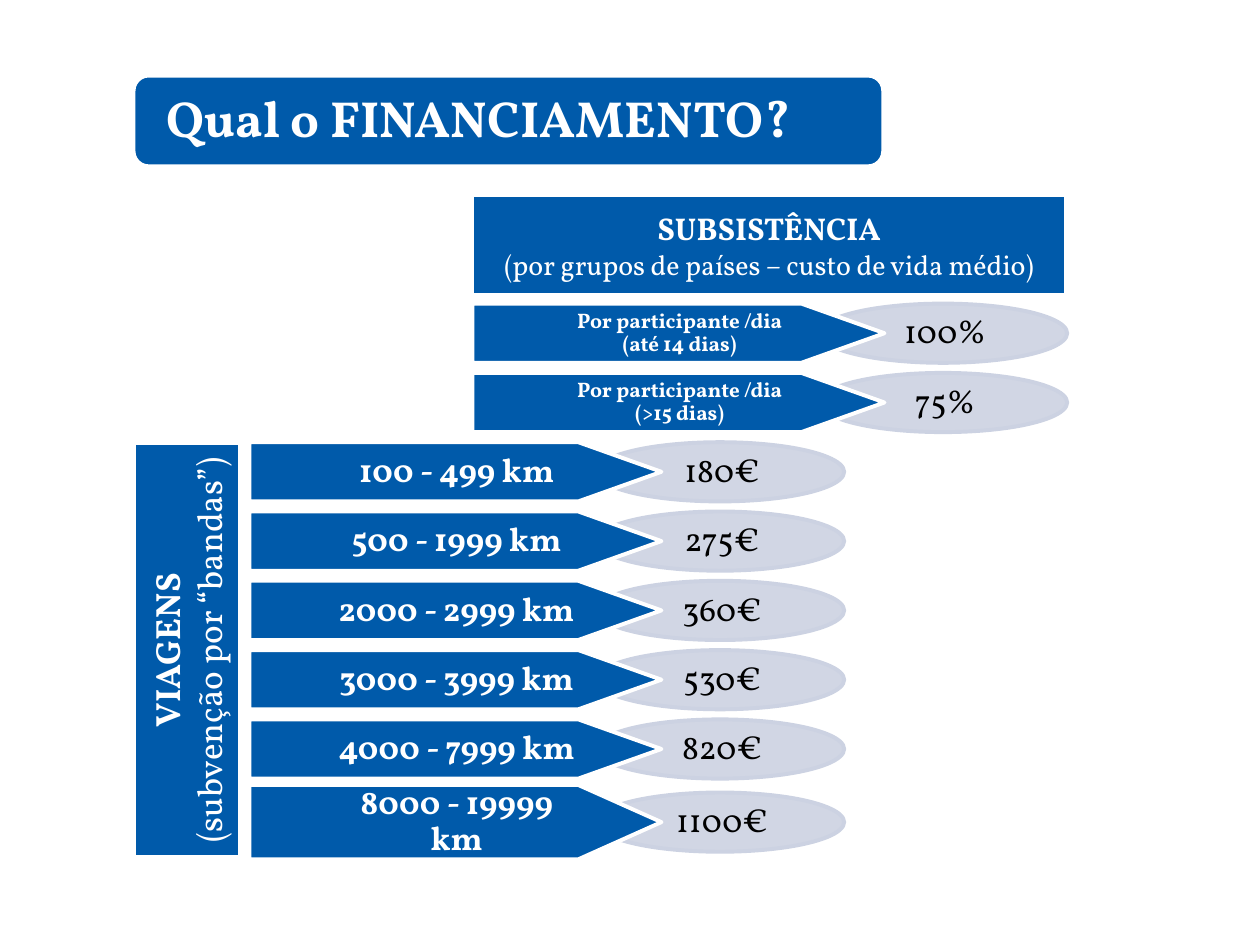
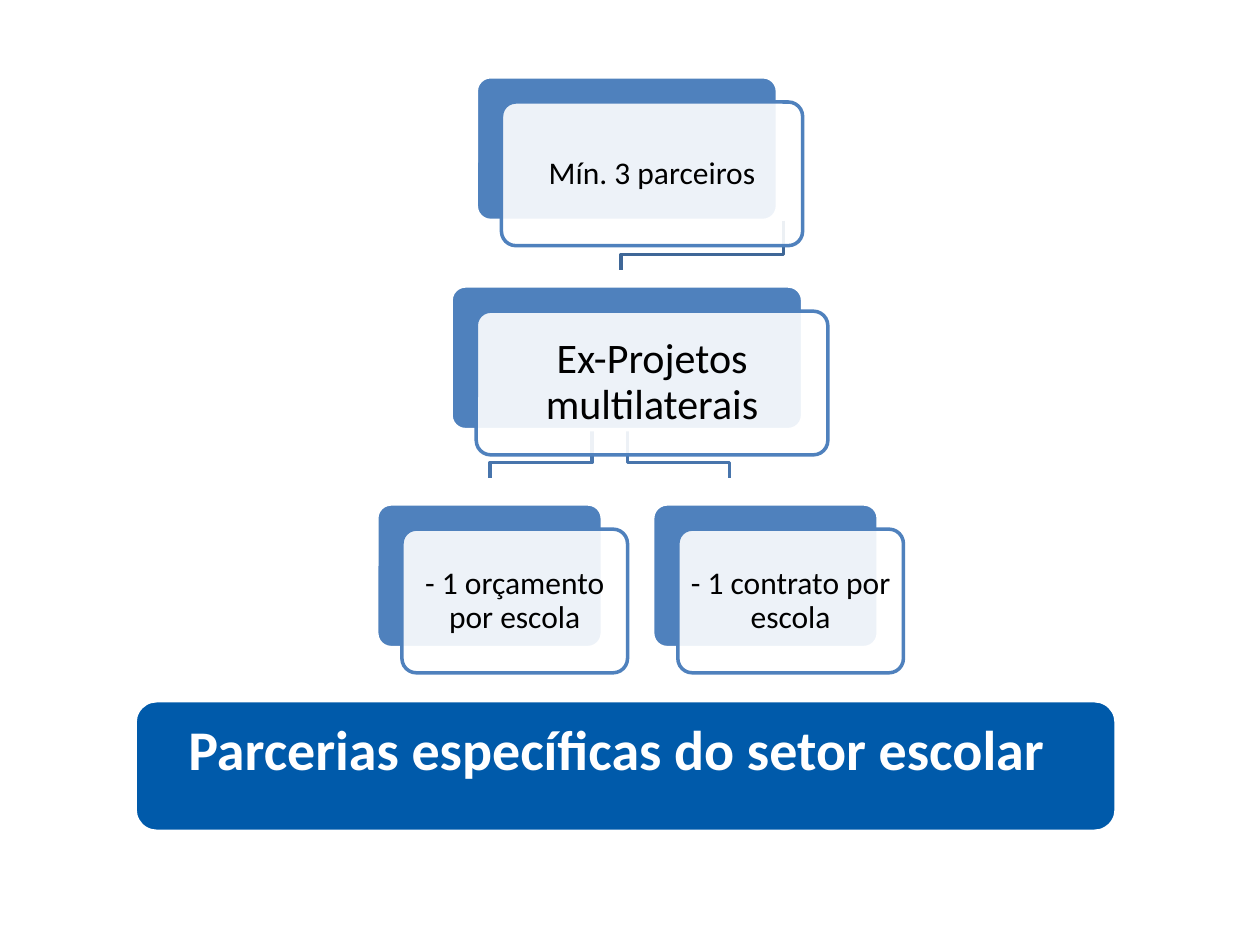
from dataclasses import dataclass

from lxml import etree
from pptx import Presentation
from pptx.dml.color import RGBColor
from pptx.enum.shapes import MSO_SHAPE
from pptx.enum.text import MSO_ANCHOR, PP_ALIGN
from pptx.oxml.ns import qn
from pptx.util import Inches, Pt


@dataclass(frozen=True)
class Theme:
    blue: str = "005AAA"
    steel: str = "4F81BD"
    pale: str = "CCD2E2"
    white: str = "FFFFFF"
    black: str = "000000"
    serif: str = "Vollkorn"
    sans: str = "Calibri"
    edge: float = 2.25
    thin: float = 2
    title: int = 29
    banner: int = 32
    label: int = 19
    small: int = 12
    box: int = 18


THEME = Theme()

TITLE = "Qual o FINANCIAMENTO?"
DAILY = [
    ("Por participante /dia (até 14 dias)", "100%"),
    ("Por participante /dia (>15 dias)", "75%"),
]
TRAVEL = [
    ("100 - 499 km", "180€"),
    ("500 - 1999 km", "275€"),
    ("2000 - 2999 km", "360€"),
    ("3000 - 3999 km", "530€"),
    ("4000 - 7999 km", "820€"),
    ("8000 - 19999 km", "1100€"),
]
# Heading lines: text, size, bold
COSTS = [
    ("SUBSISTÊNCIA", 18, True),
    ("(por grupos de países – custo de vida médio)", 16, False),
]
TRIPS = [("VIAGENS", 20, True), ("(subvenção por “bandas”)", 20, False)]

BANNER = "Parcerias específicas do setor escolar"
# Cards: text, left, top, width, size
CARDS = [
    ("Mín. 3 parceiros", 3.78, 0.61, 2.39, THEME.box),
    ("Ex-Projetos multilaterais", 3.58, 2.27, 2.79, 24),
    ("- 1 orçamento por escola", 2.99, 4, 1.79, THEME.box),
    ("- 1 contrato por escola", 5.18, 4, 1.79, THEME.box),
]
# Links: start x, end x, top, colour
LINKS = [
    (4.98, 5.79, 3.4, "4875AC"),
    (4.7, 3.89, 3.4, "4875AC"),
    (6.22, 4.93, 1.75, "3F6797"),
]

ROW_TOP, PITCH, ROW_H = 2.41, 0.55, 0.47
ARROW_W, TIP, OVAL_W, OVAL_DX = 3.27, 0.66, 1.97, 2.75
CARD_H, SHIFT = 1.14, 0.2


def paint(fill, color, alpha=100):
    fill.solid()
    fill.fore_color.rgb = RGBColor.from_string(color)
    if alpha < 100:
        for node in fill._xPr.iter(qn("a:srgbClr")):
            etree.SubElement(node, qn("a:alpha"), val=str(alpha * 1000))


def draw(slide, kind, left, top, width, height, fill=THEME.blue,
         edge=THEME.white, weight=THEME.edge, alpha=100, adj=None):
    shape = slide.shapes.add_shape(
        kind, Inches(left), Inches(top), Inches(width), Inches(height))
    shape.shadow.inherit = False
    paint(shape.fill, fill, alpha)
    paint(shape.line.fill, edge)
    shape.line.width = Pt(weight)
    if adj is not None:
        shape.adjustments[0] = adj
    return shape


def write(shape, lines, size=THEME.label, color=THEME.white, font=THEME.serif,
          bold=False, align=PP_ALIGN.CENTER, pads=(0.03,) * 4, space=0.9):
    """Fill a shape with one text, or with (text, size, bold) lines."""
    if isinstance(lines, str):
        lines = [(lines, size, bold)]
    frame = shape.text_frame
    frame.word_wrap = True
    frame.vertical_anchor = MSO_ANCHOR.MIDDLE
    (frame.margin_left, frame.margin_top,
     frame.margin_right, frame.margin_bottom) = map(Inches, pads)
    for i, (text, pts, heavy) in enumerate(lines):
        para = frame.add_paragraph() if i else frame.paragraphs[0]
        para.alignment = align
        para.line_spacing = space
        run = para.add_run()
        run.text = text
        run.font.name = font
        run.font.size = Pt(pts)
        run.font.bold = heavy
        run.font.color.rgb = RGBColor.from_string(color)


def add_row(slide, label, value, left, top, height=ROW_H, size=THEME.label):
    """Place an arrow with its label over an oval with its value."""
    mid = top + height / 2
    oval = draw(slide, MSO_SHAPE.OVAL, left + OVAL_DX, mid - ROW_H / 2,
                OVAL_W, ROW_H, THEME.pale, THEME.pale, alpha=90)
    write(oval, value, color=THEME.black, pads=(0.13, 0, 0.1, 0))
    arrow = draw(slide, MSO_SHAPE.PENTAGON, left, top, ARROW_W, height,
                 adj=TIP / height)
    write(arrow, label, size=size, bold=True, pads=(0.7, 0.01, 0.35, 0.01))


def add_link(slide, start, end, top, color):
    turn, foot = top + 0.27, top + 0.39
    pen = slide.shapes.build_freeform(Inches(start), Inches(top))
    pen.add_line_segments(
        [(Inches(x), Inches(y))
         for x, y in ((start, turn), (end, turn), (end, foot))], close=False)
    link = pen.convert_to_shape()
    link.shadow.inherit = False
    link.fill.background()
    paint(link.line.fill, color)
    link.line.width = Pt(THEME.thin)


def add_card(slide, text, left, top, width, size):
    draw(slide, MSO_SHAPE.ROUNDED_RECTANGLE, left, top, width, CARD_H,
         THEME.steel, weight=THEME.thin, adj=0.1)
    front = draw(slide, MSO_SHAPE.ROUNDED_RECTANGLE, left + SHIFT, top + SHIFT,
                 width, CARD_H, THEME.white, THEME.steel, THEME.thin,
                 alpha=90, adj=0.1)
    write(front, text, size=size, color=THEME.black, font=THEME.sans,
          pads=(0.05,) * 4)


def fund_slide(slide):
    title = draw(slide, MSO_SHAPE.ROUNDED_RECTANGLE, 1.06, 0.6, 5.95, 0.72)
    write(title, TITLE, size=THEME.title, bold=True, align=PP_ALIGN.LEFT,
          pads=(0.23, 0, 0.23, 0))
    write(draw(slide, MSO_SHAPE.RECTANGLE, 3.75, 1.55, 4.71, 0.79),
          COSTS, space=1)
    side = draw(slide, MSO_SHAPE.RECTANGLE, -0.16, 4.74, 3.29, 0.84)
    side.rotation = 270
    write(side, TRIPS, space=1)
    for i, (label, value) in enumerate(DAILY):
        add_row(slide, label, value, 3.75, ROW_TOP + i * PITCH,
                size=THEME.small)
    for i, (label, value) in enumerate(TRAVEL, len(DAILY)):
        add_row(slide, label, value, 1.98, ROW_TOP + i * PITCH)\
            if (label, value) != TRAVEL[-1] else \
            add_row(slide, label, value, 1.98, 6.23, height=0.59)


def school_slide(slide):
    band = draw(slide, MSO_SHAPE.ROUNDED_RECTANGLE, 1.07, 5.56, 7.79, 1.04)
    write(band, BANNER, size=THEME.banner, font=THEME.sans, bold=True,
          pads=(0.1, 0.1, 0.24, 0.31))
    for link in LINKS:
        add_link(slide, *link)
    for card in CARDS:
        add_card(slide, *card)


def main():
    deck = Presentation()
    deck.slide_width, deck.slide_height = Inches(10), Inches(7.5)
    for build in (fund_slide, school_slide):
        build(deck.slides.add_slide(deck.slide_layouts[6]))
    deck.save("out.pptx")


if __name__ == "__main__":
    main()
